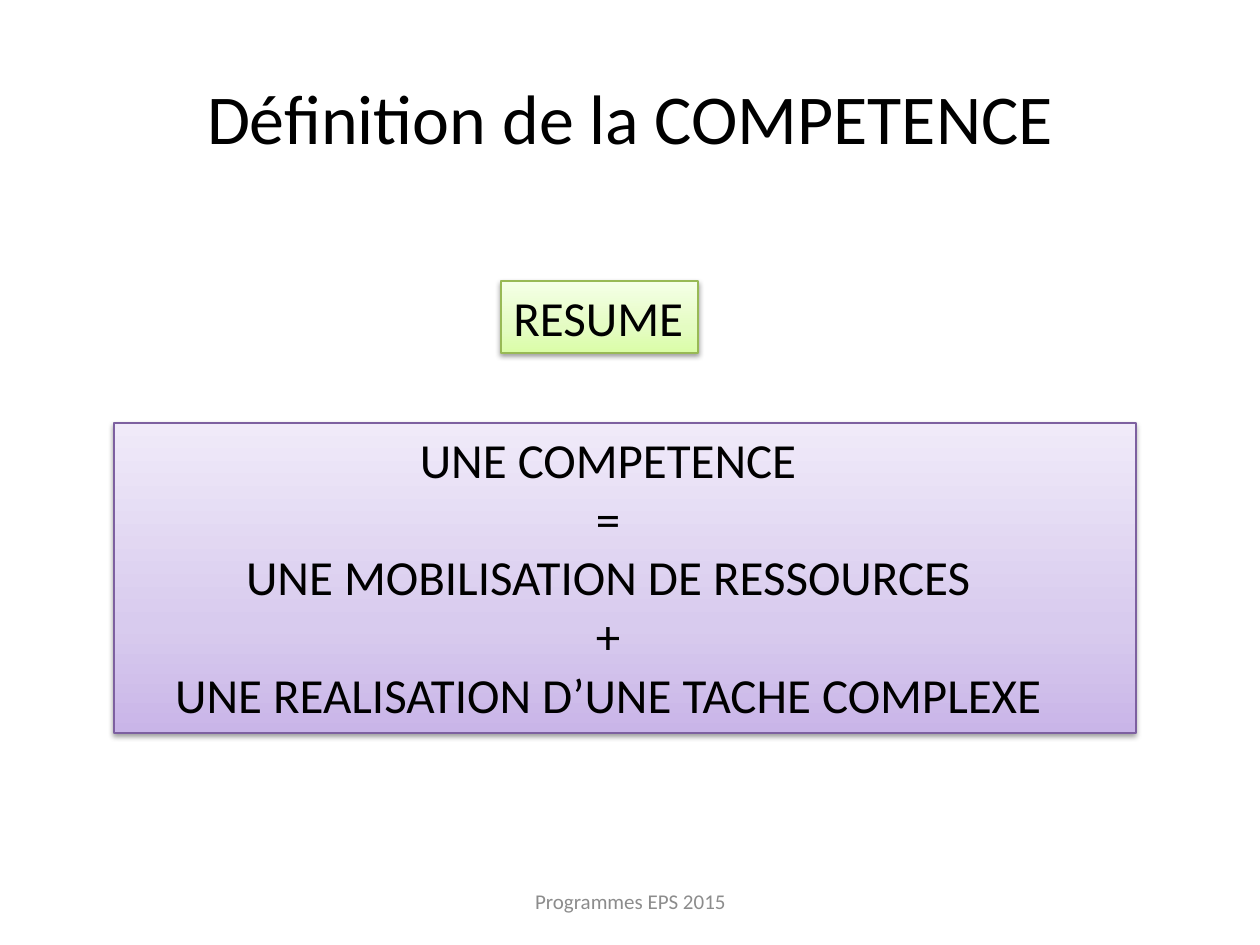
from lxml import etree
from pptx import Presentation
from pptx import util as u
from pptx.dml.color import RGBColor
from pptx.enum import text
from pptx.oxml.ns import nsdecls

PX = u.Inches(1) / 126
COLORS = {
    "ink": "000000", "footer": "8C8C8C",
    "green line": "98B955", "purple line": "7D60A0",
}
GRADIENTS = {
    "green": ["DAFDA7", "E4FCC2", "F5FFE7"],
    "purple": ["C9B5E8", "D8CBEE", "F0EAF9"],
}
STOPS = [0, 35, 100]


def write(box, place, lines, size, color, anchor):
    box.left, box.top, box.width, box.height = [round(n * PX) for n in place]
    frame = box.text_frame
    frame.word_wrap = True
    frame.vertical_anchor = anchor
    frame.text = "\n".join(lines)
    for para in frame.paragraphs:
        para.alignment = text.PP_ALIGN.CENTER
        para.font.size = u.Pt(size)
        para.font.name = "Calibri"
        para.font.color.rgb = RGBColor.from_string(COLORS[color])


def decorate(box, tint):
    """Give the box an outline, a bottom-to-top gradient and a soft shadow."""
    box.line.color.rgb = RGBColor.from_string(COLORS[tint + " line"])
    box.line.width = u.Pt(0.75)
    stops = "".join(
        f'<a:gs pos="{stop * 1000}"><a:srgbClr val="{color}"/></a:gs>'
        for stop, color in zip(STOPS, GRADIENTS[tint]))
    gradient = etree.fromstring(
        f'<a:gradFill {nsdecls("a")} rotWithShape="1"><a:gsLst>{stops}</a:gsLst>'
        '<a:lin ang="16200000" scaled="0"/></a:gradFill>')
    shadow = etree.fromstring(
        f'<a:effectLst {nsdecls("a")}><a:outerShdw blurRad="{u.Pt(3.1)}" '
        f'dist="{u.Pt(1.6)}" dir="5400000" rotWithShape="0">'
        '<a:srgbClr val="000000"><a:alpha val="38000"/></a:srgbClr>'
        '</a:outerShdw></a:effectLst>')
    outline = box.line._get_or_add_ln()
    box.fill.background()
    outline.getparent().replace(outline.getprevious(), gradient)
    outline.addnext(shadow)


deck = Presentation()
deck.slide_width, deck.slide_height = u.Inches(10), u.Inches(7.5)
page = deck.slides.add_slide(deck.slide_layouts[5])
middle, top = text.MSO_ANCHOR.MIDDLE, text.MSO_ANCHOR.TOP

write(page.shapes.title, (63, 38, 1134, 157), ["Définition de la COMPETENCE"],
      40, "ink", middle)

summary = page.shapes.add_textbox(0, 0, 0, 0)
write(summary, (501, 281, 197, 72), ["RESUME"], 28, "ink", top)
summary.text_frame.paragraphs[0].alignment = text.PP_ALIGN.LEFT
summary.text_frame.word_wrap = False
decorate(summary, "green")

definition = page.shapes.add_textbox(0, 0, 0, 0)
write(definition, (114, 423, 1022, 310), [
    "UNE COMPETENCE",
    "=",
    "UNE MOBILISATION DE RESSOURCES",
    "+",
    "UNE REALISATION D’UNE TACHE COMPLEXE",
], 28, "ink", top)
heading = definition.text_frame.paragraphs[0]
heading._p.get_or_add_pPr().set("marR", str(round(34 * PX)))
decorate(definition, "purple")

footer = page.shapes.add_textbox(0, 0, 0, 0)
write(footer, (431, 876, 399, 50), ["Programmes EPS 2015"], 12, "footer", middle)

deck.save("out.pptx")
